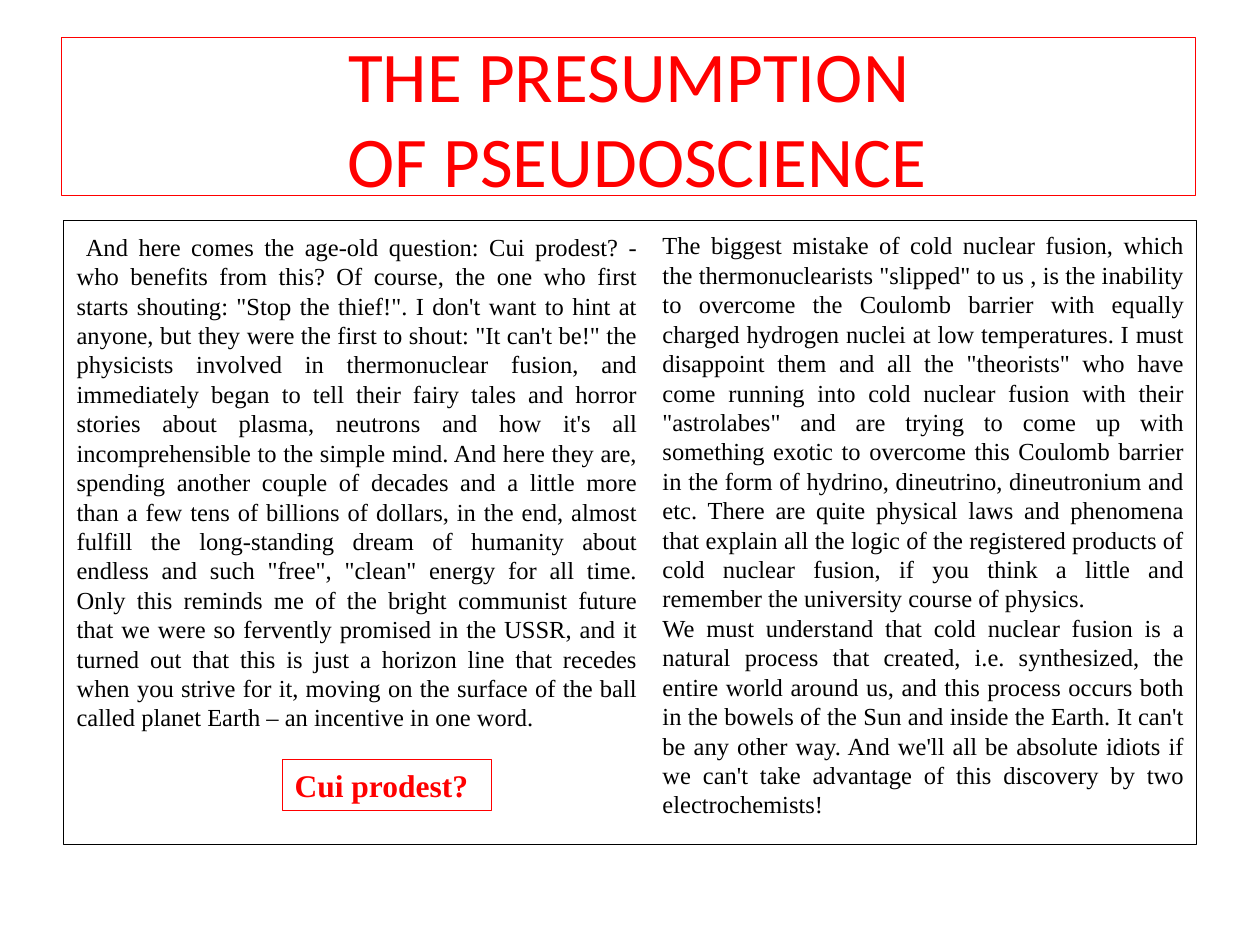
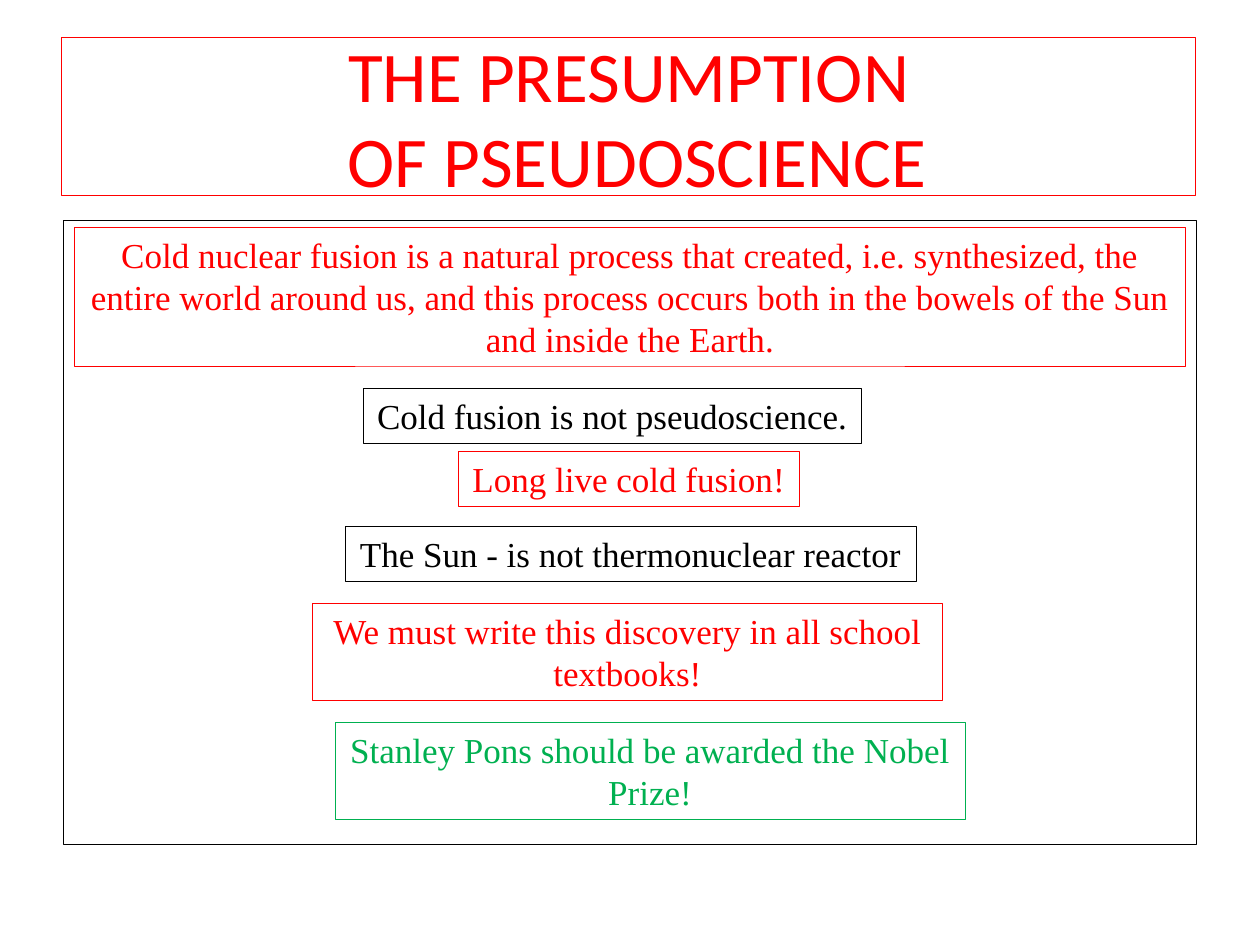
from dataclasses import dataclass
from pptx import Presentation
from pptx.dml.color import RGBColor
from pptx.enum.shapes import MSO_SHAPE
from pptx.enum.text import MSO_ANCHOR, PP_ALIGN
from pptx.util import Inches, Pt

# Content: long paragraphs are lists of sentences
TITLE = ["THE PRESUMPTION", " OF PSEUDOSCIENCE"]

QUESTION = [
    [
        " And here comes the age-old question: Cui prodest? - who benefits from this?",
        "Of course, the one who first starts shouting: \"Stop the thief!\".",
        "I don't want to hint at anyone, but they were the first to shout: \"It can't be!\" "
        "the physicists involved in thermonuclear fusion, and immediately began to tell "
        "their fairy tales and horror stories about plasma, neutrons and how it's all "
        "incomprehensible to the simple mind.",
        "And here they are, spending another couple of decades and a little more than a "
        "few tens of billions of dollars, in the end, almost fulfill the long-standing "
        "dream of humanity about endless and such \"free\", \"clean\" energy for all time.",
        "Only this reminds me of the bright communist future that we were so fervently "
        "promised in the USSR, and it turned out that this is just a horizon line that "
        "recedes when you strive for it, moving on the surface of the ball called planet "
        "Earth – an incentive in one word.",
    ],
]
MISTAKE = [
    [
        "The biggest mistake of cold nuclear fusion, which the thermonuclearists "
        "\"slipped\" to us , is the inability to overcome the Coulomb barrier with equally "
        "charged hydrogen nuclei at low temperatures.",
        "I must disappoint them and all the \"theorists\" who have come running into cold "
        "nuclear fusion with their \"astrolabes\" and are trying to come up with something "
        "exotic to overcome this Coulomb barrier in the form of hydrino, dineutrino, "
        "dineutronium and etc.",
        "There are quite physical laws and phenomena that explain all the logic of the "
        "registered products of cold nuclear fusion, if you think a little and remember "
        "the university course of physics.",
    ],
    [
        "We must understand that cold nuclear fusion is a natural process that created, "
        "i.e. synthesized, the entire world around us, and this process occurs both in the "
        "bowels of the Sun and inside the Earth.",
        "It can't be any other way.",
        "And we'll all be absolute idiots if we can't take advantage of this discovery by "
        "two electrochemists!",
    ],
]
MOTTO = "Cui prodest?"

# Slogans from top to bottom: text, colour name, left, top, width, line count
SLOGANS = [
    ("Cold nuclear fusion is a natural process that created, i.e. synthesized, the entire "
     "world around us, and this process occurs both in the bowels of the Sun and inside "
     "the Earth.", "red", 0.59, 1.8, 8.82, 3),
    ("Cold fusion is not pseudoscience.", "black", 2.88, 3.08, 3.96, 1),
    ("Long live cold fusion!", "red", 3.64, 3.58, 2.7, 1),
    ("The Sun - is not thermonuclear reactor", "black", 2.74, 4.18, 4.53, 1),
    ("We must write this discovery in all school textbooks!", "red", 2.48, 4.79, 5, 2),
    ("Stanley Pons should be awarded the Nobel Prize!", "green", 2.66, 5.73, 5, 2),
]


@dataclass(frozen=True)
class Theme:
    red: RGBColor = RGBColor(0xFF, 0x00, 0x00)
    black: RGBColor = RGBColor(0x00, 0x00, 0x00)
    green: RGBColor = RGBColor(0x00, 0xB0, 0x50)
    title_font: str = "Calibri"
    body_font: str = "Times New Roman"
    title_size: float = 40.7
    slogan_size: float = 20
    motto_size: float = 18
    body_size: float = 14
    title_line: float = 0.75
    frame_line: float = 0.5
    slogan_line: float = 0.25


THEME = Theme()

# Layout in inches
SLIDE_SIZE = (10, 7.5)
TITLE_AREA = (0.49, 0.3, 9, 1.25)
FRAME_AREA = (0.5, 1.75, 9, 4.95)
COLUMN_EDGE = 5.16
LINE_HEIGHT, PADDING = 0.335, 0.1


def write(box, paragraphs, size, color, align, font=THEME.body_font, bold=False):
    frame = box.text_frame
    frame.word_wrap = True
    for number, text in enumerate(paragraphs):
        para = frame.paragraphs[0] if number == 0 else frame.add_paragraph()
        para.alignment = align
        span = para.add_run()
        span.text = text
        span.font.name = font
        span.font.size = Pt(size)
        span.font.bold = bold
        span.font.color.rgb = color


def add_outline(page, area, color, weight, anchor=MSO_ANCHOR.TOP):
    box = page.shapes.add_shape(MSO_SHAPE.RECTANGLE, *map(Inches, area))
    box.shadow.inherit = False
    box.fill.background()
    box.line.color.rgb = color
    box.line.width = Pt(weight)
    box.text_frame.vertical_anchor = anchor
    return box


def add_column(page, area, paragraphs):
    box = page.shapes.add_textbox(*map(Inches, area))
    texts = [" ".join(sentences) for sentences in paragraphs]
    write(box, texts, THEME.body_size, THEME.black, PP_ALIGN.JUSTIFY)


def add_page(deck):
    """Blank page with the shared title and the large frame."""
    page = deck.slides.add_slide(deck.slide_layouts[6])
    title = add_outline(page, TITLE_AREA, THEME.red, THEME.title_line, MSO_ANCHOR.MIDDLE)
    title.text_frame.margin_top = title.text_frame.margin_bottom = 0
    write(title, TITLE, THEME.title_size, THEME.red, PP_ALIGN.CENTER, THEME.title_font)
    add_outline(page, FRAME_AREA, THEME.black, THEME.frame_line)
    return page


def build_question_page(deck):
    page = add_page(deck)
    left, _, width, _ = FRAME_AREA
    # Two columns of reasoning
    add_column(page, (left + 0.01, 1.79, COLUMN_EDGE - left - 0.01, 4.11), QUESTION)
    add_column(page, (COLUMN_EDGE, 1.78, left + width - COLUMN_EDGE, 4.81), MISTAKE)
    # Motto under the left column
    motto = add_outline(page, (2.24, 6.03, 1.66, 0.4), THEME.red, THEME.slogan_line)
    write(motto, [MOTTO], THEME.motto_size, THEME.red, PP_ALIGN.LEFT, bold=True)


def build_slogan_page(deck):
    page = add_page(deck)
    for text, color_name, left, top, width, lines in SLOGANS:
        color = getattr(THEME, color_name)
        area = (left, top, width, lines * LINE_HEIGHT + PADDING)
        slogan = add_outline(page, area, color, THEME.slogan_line)
        write(slogan, [text], THEME.slogan_size, color, PP_ALIGN.CENTER)


def main():
    deck = Presentation()
    deck.slide_width, deck.slide_height = map(Inches, SLIDE_SIZE)
    build_question_page(deck)
    build_slogan_page(deck)
    deck.save("out.pptx")


if __name__ == "__main__":
    main()
